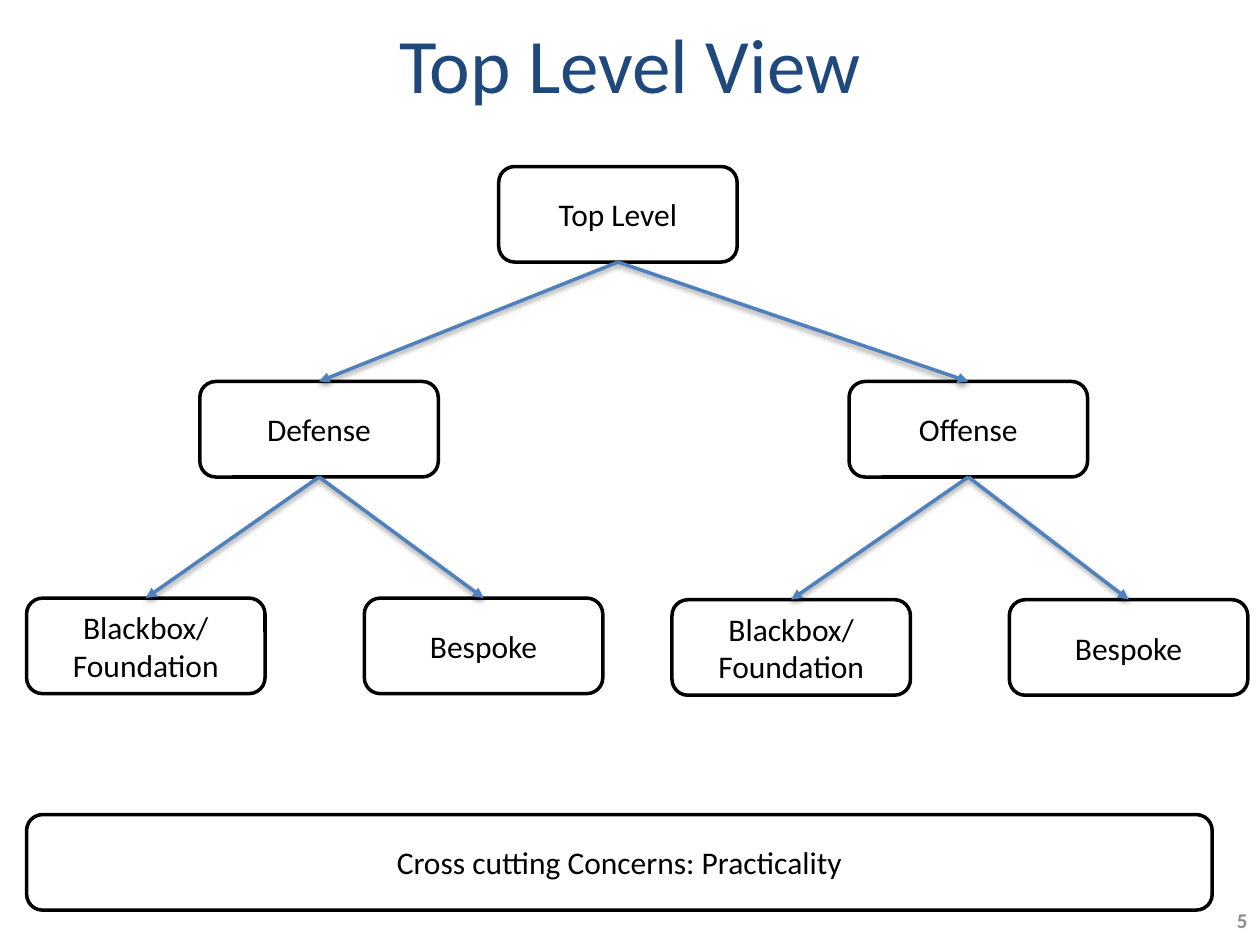
import pptx
import pptx.dml.color
import pptx.enum.shapes
import pptx.enum.text
import pptx.oxml
import pptx.oxml.ns
import pptx.util

Pt = pptx.util.Pt
RGBColor = pptx.dml.color.RGBColor
ALIGN = pptx.enum.text.PP_ALIGN
SHAPE = pptx.enum.shapes.MSO_SHAPE
CONNECTOR = pptx.enum.shapes.MSO_CONNECTOR

BLACK = RGBColor(0x00, 0x00, 0x00)
WHITE = RGBColor(0xFF, 0xFF, 0xFF)
NAVY = RGBColor(0x1F, 0x49, 0x7D)
BLUE = RGBColor(0x4F, 0x81, 0xBD)
GREY = RGBColor(0x8C, 0x8C, 0x8C)

# Text, left, top, width, height, alignment, font size, colour, bold
LABELS = [
    ("5", 670.3, 511.2, 49.7, 28.8, ALIGN.RIGHT, 12, GREY, True),
    ("Top Level View", 36, 0, 648, 72, ALIGN.CENTER, 44, NAVY, False),
]

BOX_WIDTH, BOX_HEIGHT = 136.3, 54.6
LINE_WIDTH = 2

# Node: text, left, top, parent
TREE = {
    "top": ("Top Level", 285, 95.2, None),
    "defense": ("Defense", 114.2, 218, "top"),
    "offense": ("Offense", 485.2, 218, "top"),
    "defense blackbox": ("Blackbox/\nFoundation", 15.2, 341.8, "defense"),
    "defense bespoke": ("Bespoke", 208.2, 341.8, "defense"),
    "offense blackbox": ("Blackbox/\nFoundation", 384, 342.7, "offense"),
    "offense bespoke": ("Bespoke", 576.8, 342.7, "offense"),
}
CONCERNS = ("Cross cutting Concerns: Practicality", 15.2, 465.5, 677.5)

BOTTOM_SITE, TOP_SITE = 2, 0
ARROWHEAD = '<a:tailEnd %s type="triangle"/>' % pptx.oxml.ns.nsdecls("a")
SHADOW = (
    '<a:effectLst %s><a:outerShdw blurRad="%d" dist="%d" dir="5400000" rotWithShape="0">'
    '<a:srgbClr val="000000"><a:alpha val="38000"/></a:srgbClr>'
    "</a:outerShdw></a:effectLst>" % (pptx.oxml.ns.nsdecls("a"), Pt(3.1), Pt(1.6))
)


def write_text(shape, text, align, size, color, bold=False):
    frame = shape.text_frame
    frame.word_wrap = True
    frame.vertical_anchor = pptx.enum.text.MSO_ANCHOR.MIDDLE
    para = frame.paragraphs[0]
    para.text = text
    para.alignment = align
    font_format = {"name": "Calibri", "size": Pt(size), "bold": bold}
    for span in para.runs:
        for name, value in font_format.items():
            setattr(span.font, name, value)
        span.font.color.rgb = color


def add_box(page, text, left, top, width=BOX_WIDTH):
    box = page.shapes.add_shape(
        SHAPE.ROUNDED_RECTANGLE, Pt(left), Pt(top), Pt(width), Pt(BOX_HEIGHT))
    box.shadow.inherit = False
    box.fill.solid()
    box.fill.fore_color.rgb = WHITE
    box.line.color.rgb = BLACK
    box.line.width = Pt(LINE_WIDTH)
    write_text(box, text, ALIGN.CENTER, 18, BLACK)
    return box


def add_arrow(page, parent, child):
    arrow = page.shapes.add_connector(CONNECTOR.STRAIGHT, 0, 0, 0, 0)
    arrow.begin_connect(parent, BOTTOM_SITE)
    arrow.end_connect(child, TOP_SITE)
    arrow.line.color.rgb = BLUE
    arrow.line.width = Pt(LINE_WIDTH)
    properties = arrow.element.spPr
    line = properties.find(pptx.oxml.ns.qn("a:ln"))
    line.append(pptx.oxml.parse_xml(ARROWHEAD))
    properties.append(pptx.oxml.parse_xml(SHADOW))


def main():
    deck = pptx.Presentation()
    deck.slide_width, deck.slide_height = Pt(720), Pt(540)
    page = deck.slides.add_slide(deck.slide_layouts[6])

    for text, left, top, width, height, *style in LABELS:
        label = page.shapes.add_textbox(Pt(left), Pt(top), Pt(width), Pt(height))
        write_text(label, text, *style)

    boxes = {}
    for node, (text, left, top, parent) in TREE.items():
        boxes[node] = add_box(page, text, left, top)
        if parent:
            add_arrow(page, boxes[parent], boxes[node])
    add_box(page, *CONCERNS)

    deck.save("out.pptx")


if __name__ == "__main__":
    main()
